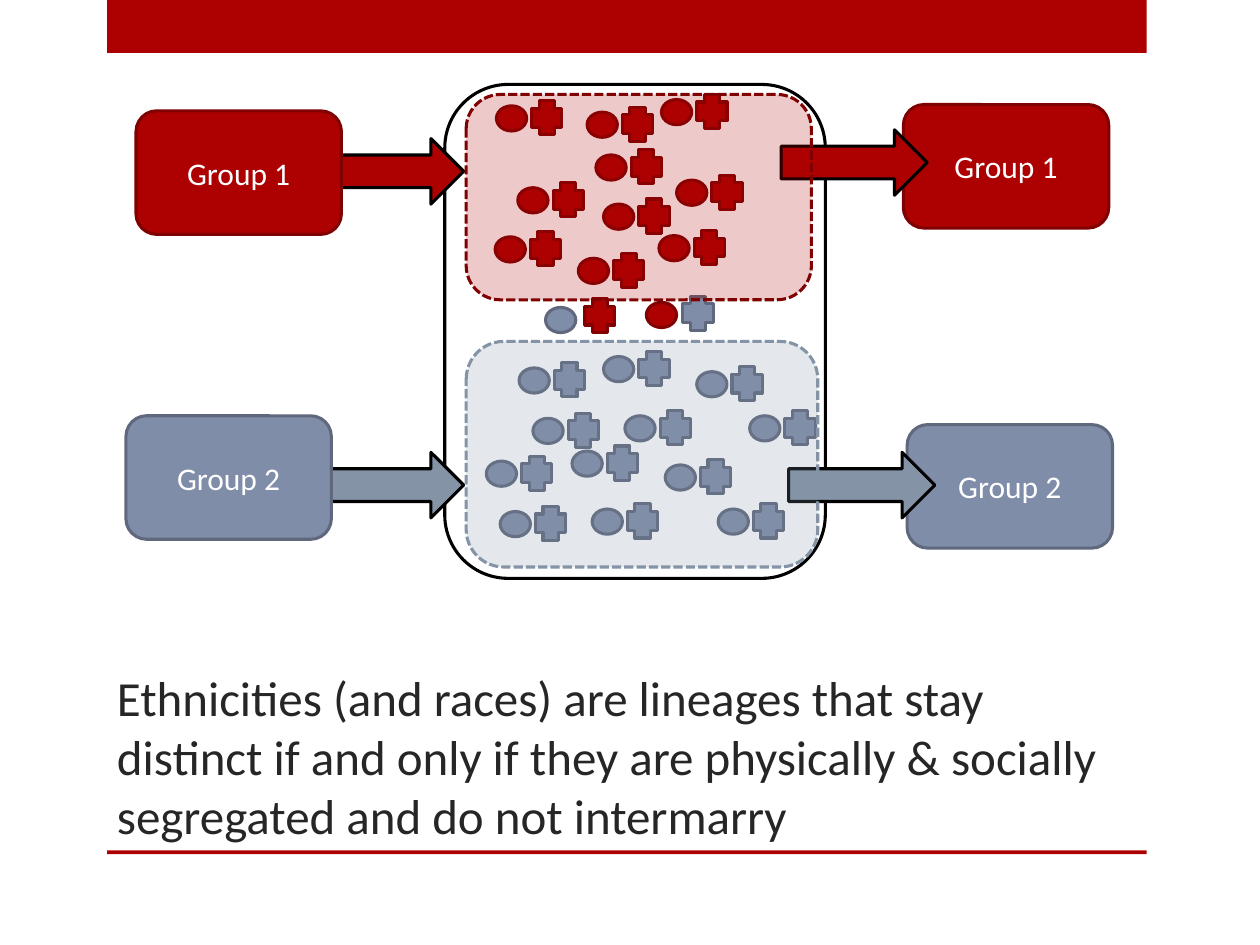
from lxml import etree
from pptx import Presentation
from pptx.dml.color import RGBColor
from pptx.enum.dml import MSO_LINE
from pptx.enum.shapes import MSO_SHAPE as Shape
from pptx.enum.text import MSO_ANCHOR as Anchor, PP_ALIGN as Align
from pptx.oxml.ns import qn
from pptx.util import Inches, Pt

COLORS = {
    "red": "AD0101", "red edge": "800101",
    "blue": "808DA9", "blue edge": "5F687D",
    "slate": "8494A6", "black": "000000",
    "white": "FFFFFF", "text": "262626",
}
FONT = "Calibri"
TITLE = ("Ethnicities (and races) are lineages that stay distinct if and only "
         "if they are physically & socially segregated and do not intermarry")

BANDS = [(0, 0.42), (6.75, 0.03)]
POPULATION = (3.53, 0.67, 3.02, 3.92)
BOX_SIZE = (1.63, 0.98)
ORIGIN_GROUPS = [("Group 1", "red", 1.08, 0.88), ("Group 2", "blue", 1, 3.3)]
RESULT_GROUPS = [("Group 1", "red", 7.17, 0.83), ("Group 2", "blue", 7.2, 3.37)]
ARROW_HEIGHT = 0.52
ARROWS = [
    ("slate", 2.39, 3.59, 1.29), ("slate", 6.26, 3.59, 1.16),
    ("red", 6.2, 1.03, 1.16), ("red", 2.39, 1.1, 1.29),
]
REGIONS = [
    ("slate", "slate", (3.7, 2.71, 2.79, 1.79)),
    ("red", "red edge", (3.7, 0.75, 2.74, 1.63)),
]
REGION_OPACITY = 21

COUPLES = {
    "red": [
        (5.25, 0.79), (4.73, 1.23), (3.94, 0.84), (5.37, 1.43), (4.11, 1.49),
        (4.66, 0.89), (4.79, 1.62), (3.93, 1.88), (5.23, 1.87), (4.59, 2.05),
    ],
    "blue": [
        (4.7, 4.04), (5.28, 3.69), (3.97, 4.06), (3.86, 3.66), (5.7, 4.04),
        (4.54, 3.58), (4.96, 3.3), (5.53, 2.95), (4.23, 3.32), (4.12, 2.92),
        (5.95, 3.3), (4.79, 2.83),
    ],
}
MIXED_COUPLES = [
    ("blue", (4.33, 2.44), "red", (4.64, 2.37)),
    ("red", (5.13, 2.4), "blue", (5.42, 2.35)),
]
OVAL_SIZE = (0.24, 0.2)
CROSS_SIZE = (0.24, 0.27)
CROSS_SHIFT = (0.28, -0.04)


def rgb(color):
    return RGBColor.from_string(COLORS[color])


def write(holder, text, *, size, color, align=Align.LEFT, anchor=Anchor.MIDDLE):
    frame = holder.text_frame
    frame.word_wrap = True
    frame.vertical_anchor = anchor
    paragraph = frame.paragraphs[0]
    paragraph.alignment = align
    run = paragraph.add_run()
    run.text = text
    run.font.name = FONT
    run.font.size = Pt(size)
    run.font.color.rgb = rgb(color)


def draw(slide, kind, place, *, fill=None, edge=None, opacity=None, dash=None):
    shape = slide.shapes.add_shape(kind, *map(Inches, place))
    shape.shadow.inherit = False
    if fill:
        shape.fill.solid()
        shape.fill.fore_color.rgb = rgb(fill)
    else:
        shape.fill.background()
    if opacity:
        tint = shape.fill._xPr.find(qn("a:solidFill"))[0]
        etree.SubElement(tint, qn("a:alpha")).set("val", str(opacity * 1000))
    if edge:
        shape.line.color.rgb = rgb(edge)
        shape.line.width = Pt(1.75)
    else:
        shape.line.fill.background()
    if dash:
        shape.line.dash_style = dash
    return shape


def draw_groups(slide, groups):
    for label, color, left, top in groups:
        box = draw(slide, Shape.ROUNDED_RECTANGLE, (left, top, *BOX_SIZE),
                   fill=color, edge=f"{color} edge")
        write(box, label, size=18, color="white", align=Align.CENTER)


def draw_couple(slide, oval_color, oval_at, cross_color, cross_at):
    draw(slide, Shape.OVAL, (*oval_at, *OVAL_SIZE),
         fill=oval_color, edge=f"{oval_color} edge")
    draw(slide, Shape.CROSS, (*cross_at, *CROSS_SIZE),
         fill=cross_color, edge=f"{cross_color} edge")


def main():
    deck = Presentation()
    deck.slide_width, deck.slide_height = Inches(10), Inches(7.5)
    slide = deck.slides.add_slide(deck.slide_layouts[6])

    for top, height in BANDS:
        draw(slide, Shape.RECTANGLE, (0.85, top, 8.25, height), fill="red")
    title = slide.shapes.add_textbox(*map(Inches, (0.83, 5.08, 8.08, 1.67)))
    write(title, TITLE, size=28, color="text", anchor=Anchor.BOTTOM)

    draw_groups(slide, RESULT_GROUPS)
    draw(slide, Shape.ROUNDED_RECTANGLE, POPULATION, edge="black")
    for color, places in COUPLES.items():
        for left, top in places:
            cross_at = (left + CROSS_SHIFT[0], top + CROSS_SHIFT[1])
            draw_couple(slide, color, (left, top), color, cross_at)
    for couple in MIXED_COUPLES:
        draw_couple(slide, *couple)
    for color, left, top, width in ARROWS:
        draw(slide, Shape.RIGHT_ARROW, (left, top, width, ARROW_HEIGHT),
             fill=color, edge="black")
    draw_groups(slide, ORIGIN_GROUPS)
    for color, edge, place in REGIONS:
        draw(slide, Shape.ROUNDED_RECTANGLE, place, fill=color, edge=edge,
             opacity=REGION_OPACITY, dash=MSO_LINE.SQUARE_DOT)

    deck.save("out.pptx")


if __name__ == "__main__":
    main()
